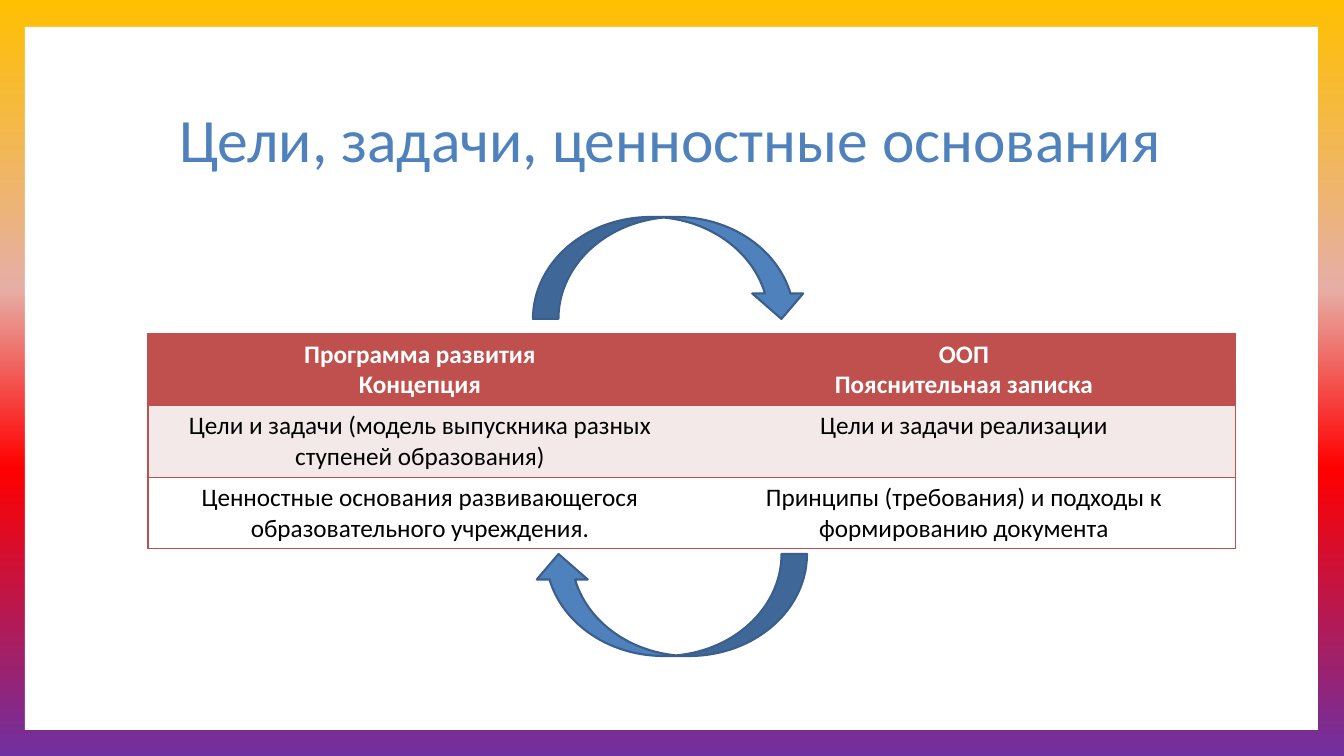
import pptx
import pptx.util
import pptx.dml.color
import pptx.enum.shapes
import pptx.enum.text
import pptx.oxml
import pptx.oxml.ns

TITLE = "Цели, задачи, ценностные основания"
ROWS = [
    ("Программа развития\nКонцепция", "ООП\nПояснительная записка"),
    ("Цели и задачи (модель выпускника разных ступеней образования)",
     "Цели и задачи реализации"),
    ("Ценностные основания развивающегося образовательного учреждения.",
     "Принципы (требования) и подходы к формированию документа"),
]
COLORS = {
    "white": "FFFFFF", "black": "000000", "blue": "4F81BD", "outline": "3A5F8C",
    "red": "C0504D", "band": "F4E9E9",
}
ROW_STYLES = [("red", "white", True), ("band", "black", False), ("white", "black", False)]
BACKDROP = [(0, "FFC000"), (38, "E6AFA6"), (62, "FF0000"), (100, "7030A0")]
PAGE_SIZE = (1344, 756)
PANEL = (25, 27, 1293, 703)
TITLE_BOX = (126, 68, 1089, 149)
TABLE_LEFT, TABLE_TOP, COLUMN_WIDTH, ROW_HEIGHT = 148, 334, 544, 71
ARROW_LEFT, ARROW_WIDTH, ARROW_HEIGHT = 533, 274, 102
ARROWS = [(217, 0), (554, 180)]
PLAIN_TABLE = "{2D5ABB26-0587-4C30-8999-92F81FD0307C}"
EMU_PER_PX = 914400 / 100.8


def px(*lengths):
    return [pptx.util.Emu(round(length * EMU_PER_PX)) for length in lengths]


def rgb(name):
    return pptx.dml.color.RGBColor.from_string(COLORS[name])


def apply(target, formats):
    for name, value in formats.items():
        setattr(target, name, value)


def paint(fill, name):
    fill.solid()
    fill.fore_color.rgb = rgb(name)


def write(frame, text, size, color, bold=False, spacing=1.0):
    frame.text = text
    for para in frame.paragraphs:
        apply(para, {"alignment": pptx.enum.text.PP_ALIGN.CENTER, "line_spacing": spacing})
        for span in para.runs:
            apply(span.font, {"name": "Calibri", "size": pptx.util.Pt(size), "bold": bold})
            span.font.color.rgb = rgb(color)


def add_backdrop(page):
    fill = page.background.fill
    fill.gradient()
    fill.gradient_angle = 270
    stops = page.background._cSld.find(".//" + pptx.oxml.ns.qn("a:gsLst"))
    for stop in list(stops):
        stops.remove(stop)
    for percent, color in BACKDROP:
        stops.append(pptx.oxml.parse_xml(
            f'<a:gs {pptx.oxml.ns.nsdecls("a")} pos="{percent * 1000}">'
            f'<a:srgbClr val="{color}"/></a:gs>'))


def add_figure(page, kind, box, fill, line=None, rotation=0):
    shape = page.shapes.add_shape(kind, *px(*box))
    shape.shadow.inherit = False
    shape.rotation = rotation
    paint(shape.fill, fill)
    if line:
        paint(shape.line.fill, line)
        shape.line.width = pptx.util.Pt(1.5)
    else:
        shape.line.fill.background()
    return shape


def add_borders(cell, sides):
    properties = cell._tc.get_or_add_tcPr()
    for index, side in enumerate(sides):
        properties.insert(index, pptx.oxml.parse_xml(
            f'<a:ln{side} {pptx.oxml.ns.nsdecls("a")} w="12700"><a:solidFill>'
            f'<a:srgbClr val="{COLORS["red"]}"/></a:solidFill></a:ln{side}>'))


def add_comparison(page):
    frame = page.shapes.add_table(len(ROWS), 2, *px(
        TABLE_LEFT, TABLE_TOP, COLUMN_WIDTH * 2, ROW_HEIGHT * len(ROWS)))
    table = frame.table
    apply(table, {"first_row": False, "horz_banding": False})
    table._tbl.tblPr.find(pptx.oxml.ns.qn("a:tableStyleId")).text = PLAIN_TABLE
    for row, texts, (fill, color, bold) in zip(table.rows, ROWS, ROW_STYLES):
        row.height = px(ROW_HEIGHT)[0]
        for cell, text, side in zip(row.cells, texts, "LR"):
            write(cell.text_frame, text, 18, color, bold)
            paint(cell.fill, fill)
            add_borders(cell, [side, "T", "B"])


def main():
    deck = pptx.Presentation()
    deck.slide_width, deck.slide_height = px(*PAGE_SIZE)
    page = deck.slides.add_slide(deck.slide_layouts[5])
    add_backdrop(page)
    shapes = pptx.enum.shapes.MSO_SHAPE
    panel = add_figure(page, shapes.RECTANGLE, PANEL, "white")

    title = page.shapes.title
    apply(title, dict(zip(("left", "top", "width", "height"), px(*TITLE_BOX))))
    apply(title.text_frame, {
        "word_wrap": True,
        "auto_size": pptx.enum.text.MSO_AUTO_SIZE.NONE,
        "vertical_anchor": pptx.enum.text.MSO_ANCHOR.MIDDLE,
    })
    write(title.text_frame, TITLE, 44, "blue", spacing=0.9)
    title._element.addprevious(panel._element)

    add_comparison(page)
    for top, rotation in ARROWS:
        add_figure(page, shapes.CURVED_DOWN_ARROW,
                   (ARROW_LEFT, top, ARROW_WIDTH, ARROW_HEIGHT), "blue", "outline", rotation)
    deck.save("out.pptx")


if __name__ == "__main__":
    main()
